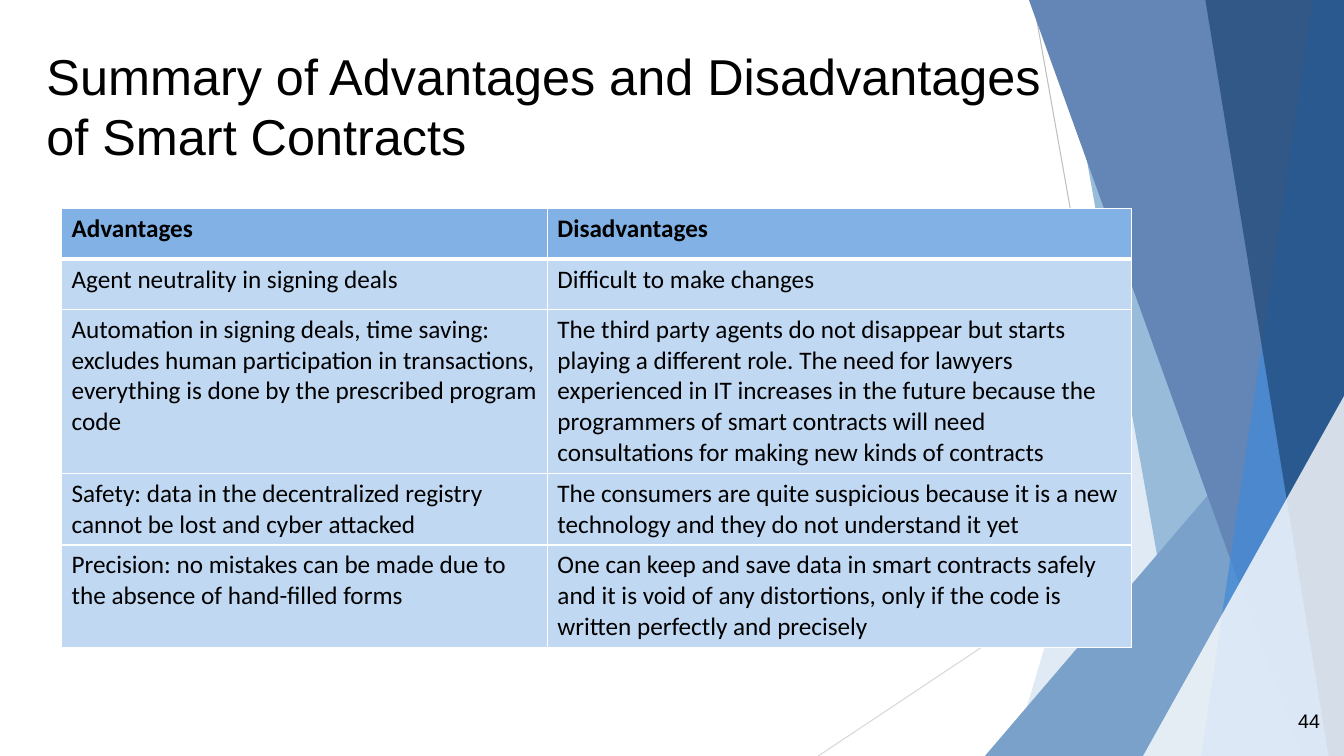
from dataclasses import dataclass

from lxml import etree
from pptx import Presentation
from pptx.dml.color import RGBColor
from pptx.enum.shapes import MSO_CONNECTOR
from pptx.enum.text import MSO_ANCHOR, MSO_AUTO_SIZE, PP_ALIGN
from pptx.oxml.ns import qn
from pptx.util import Pt

STRAIGHT = MSO_CONNECTOR.STRAIGHT
NO_FIT = MSO_AUTO_SIZE.NONE
MIDDLE, BOTTOM = MSO_ANCHOR.MIDDLE, MSO_ANCHOR.BOTTOM
LEFT, RIGHT = PP_ALIGN.LEFT, PP_ALIGN.RIGHT
TITLE_ONLY = 5
WIDTH, HEIGHT = 960, 540


@dataclass(frozen=True)
class Theme:
    text: str = "000000"
    border: str = "FFFFFF"
    header: str = "82B1E5"
    body: str = "C1D8F2"
    dark_line: str = "BFBFBF"
    light_line: str = "D8D8D8"
    mist: str = "DFEAF4"
    sky: str = "98BBDA"
    steel: str = "79A1CA"
    slate: str = "6386B6"
    azure: str = "418AD8"
    navy: str = "17406D"
    white: str = "FFFFFF"
    heading_font: str = "Arial"
    table_font: str = "Calibri"
    title_size: int = 36
    table_size: int = 18
    number_size: int = 14


THEME = Theme()

FACETS = [
    ([(884, 0), (WIDTH, 0), (WIDTH, HEIGHT), (723, HEIGHT)], THEME.mist, 100),
    ([(756, 0), (WIDTH, 0), (WIDTH, HEIGHT), (852, HEIGHT)], THEME.sky, 100),
    ([(WIDTH, 240), (WIDTH, HEIGHT), (703.5, HEIGHT)], THEME.steel, 100),
    ([(735, 0), (WIDTH, 0), (WIDTH, HEIGHT), (929.5, HEIGHT)], THEME.slate, 100),
    ([(938, 0), (WIDTH, 0), (WIDTH, HEIGHT), (858, HEIGHT)], THEME.azure, 70),
    ([(861, 0), (WIDTH, 0), (WIDTH, HEIGHT), (949, HEIGHT)], THEME.navy, 65),
    ([(WIDTH, 283), (WIDTH, HEIGHT), (816.5, HEIGHT)], THEME.white, 80),
]

COLUMN_WIDTHS = [347, 417]
ROW_HEIGHTS = [36, 36, 117, 51, 73]
ROWS = [
    ("Advantages", "Disadvantages"),
    ("Agent neutrality in signing deals", "Difficult to make changes"),
    ("Automation in signing deals, time saving: excludes human participation "
     "in transactions, everything is done by the prescribed program code",
     "The third party agents do not disappear but starts playing a different "
     "role. The need for lawyers experienced in IT increases in the future "
     "because the programmers of smart contracts will need consultations for "
     "making new kinds of contracts"),
    ("Safety: data in the decentralized registry cannot be lost and cyber attacked",
     "The consumers are quite suspicious because it is a new technology and "
     "they do not understand it yet"),
    ("Precision: no mistakes can be made due to the absence of hand-filled forms",
     "One can keep and save data in smart contracts safely and it is void of "
     "any distortions, only if the code is written perfectly and precisely"),
]


def rgb(color):
    return RGBColor.from_string(color)


def set_text(tf, text, font, size, bold=False, align=LEFT):
    tf.text = text
    p = tf.paragraphs[0]
    p.alignment = align
    r = p.runs[0]
    r.font.name = font
    r.font.size = Pt(size)
    r.font.bold = bold
    r.font.color.rgb = rgb(THEME.text)


def add_line(slide, start, end, color):
    line = slide.shapes.add_connector(STRAIGHT, *map(Pt, start + end))
    line.line.color.rgb = rgb(color)
    line.line.width = Pt(0.75)
    etree.SubElement(line._element.spPr, qn("a:effectLst"))


def add_facet(slide, points, color, opacity):
    corners = [(Pt(x), Pt(y)) for x, y in points]
    builder = slide.shapes.build_freeform(*corners[0])
    builder.add_line_segments(corners[1:], close=True)
    sp = builder.convert_to_shape()
    sp.shadow.inherit = False
    sp.line.fill.background()
    sp.fill.solid()
    sp.fill.fore_color.rgb = rgb(color)
    if opacity < 100:
        clr = sp._element.spPr.find(".//" + qn("a:srgbClr"))
        etree.SubElement(clr, qn("a:alpha"), val=str(opacity * 1000))


def set_borders(cell, top, bottom):
    tc_pr = cell._tc.get_or_add_tcPr()
    for side, width in (("L", 1), ("R", 1), ("T", top), ("B", bottom)):
        ln = etree.SubElement(tc_pr, qn("a:ln" + side), w=str(Pt(width)))
        fill = etree.SubElement(ln, qn("a:solidFill"))
        etree.SubElement(fill, qn("a:srgbClr"), val=THEME.border)


def add_comparison(slide, left, top):
    table = slide.shapes.add_table(
        len(ROWS), len(COLUMN_WIDTHS), Pt(left), Pt(top),
        Pt(sum(COLUMN_WIDTHS)), Pt(sum(ROW_HEIGHTS))).table
    for column, width in zip(table.columns, COLUMN_WIDTHS):
        column.width = Pt(width)
    for i, (row, texts) in enumerate(zip(table.rows, ROWS)):
        row.height = Pt(ROW_HEIGHTS[i])
        for cell, text in zip(row.cells, texts):
            set_text(cell.text_frame, text, THEME.table_font,
                     THEME.table_size, bold=i == 0)
            set_borders(cell, top=3 if i == 1 else 1, bottom=3 if i == 0 else 1)
            cell.fill.solid()
            cell.fill.fore_color.rgb = rgb(THEME.body if i else THEME.header)


def set_title(slide, text):
    title = slide.shapes.title
    title.left, title.top, title.width, title.height = map(Pt, (26, 24, 728, 101.5))
    tf = title.text_frame
    tf.word_wrap = True
    tf.auto_size = NO_FIT
    tf.vertical_anchor = BOTTOM
    tf.margin_left = tf.margin_right = tf.margin_top = tf.margin_bottom = Pt(7.2)
    set_text(tf, text, THEME.heading_font, THEME.title_size)


def add_slide_number(slide, number):
    tf = slide.shapes.add_textbox(Pt(734), Pt(500), Pt(216), Pt(29)).text_frame
    tf.word_wrap = True
    tf.vertical_anchor = MIDDLE
    set_text(tf, number, THEME.heading_font, THEME.number_size, align=RIGHT)


def main():
    prs = Presentation()
    prs.slide_width, prs.slide_height = Pt(WIDTH), Pt(HEIGHT)
    slide = prs.slides.add_slide(prs.slide_layouts[TITLE_ONLY])
    add_line(slide, (738, 0), (834, HEIGHT), THEME.dark_line)
    add_line(slide, (WIDTH, 290), (584.5, HEIGHT), THEME.light_line)
    for points, color, opacity in FACETS:
        add_facet(slide, points, color, opacity)
    set_title(slide, "Summary of Advantages and Disadvantages of Smart Contracts")
    add_comparison(slide, 44, 149)
    add_slide_number(slide, "44")
    prs.save("out.pptx")


if __name__ == "__main__":
    main()
